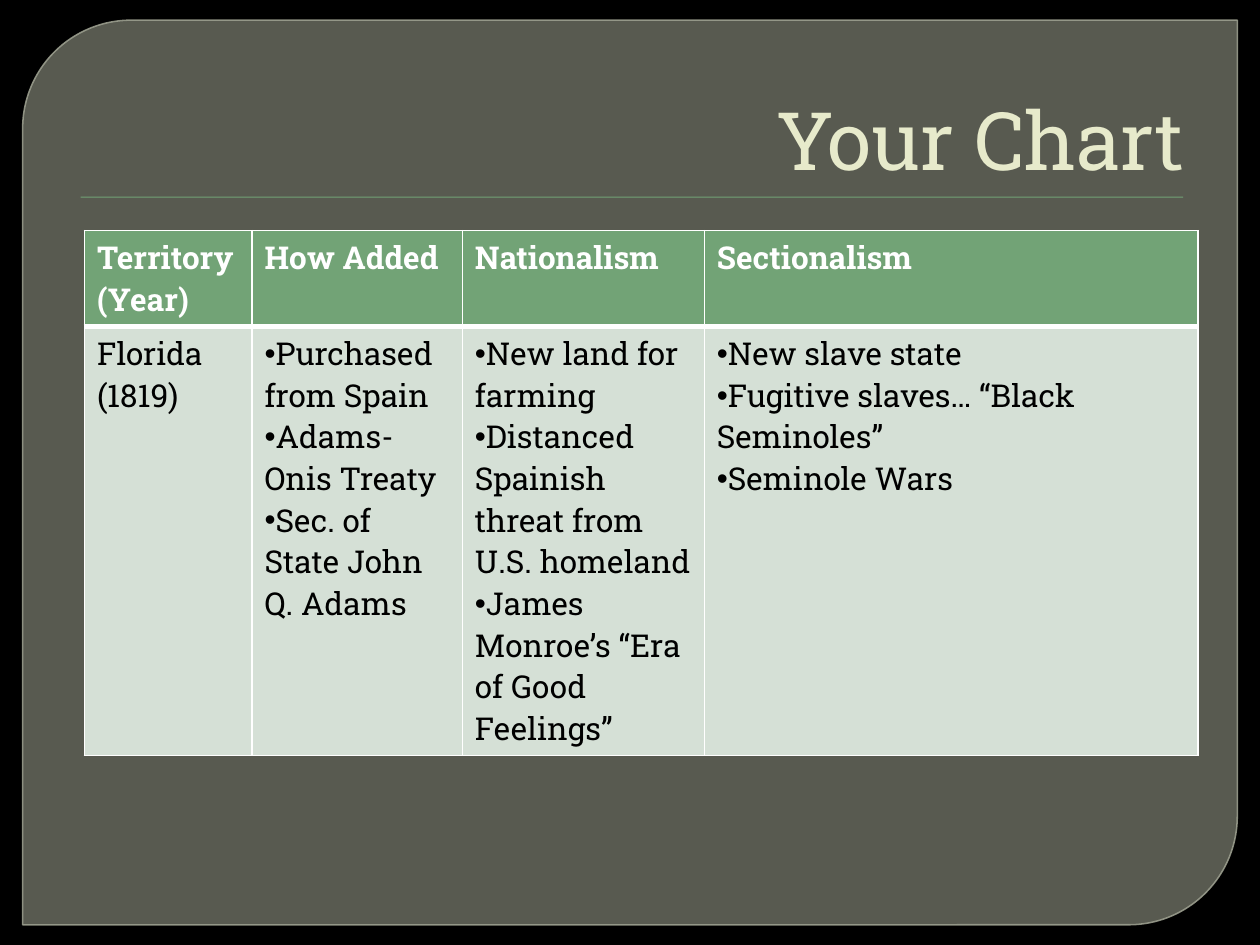
from dataclasses import dataclass

import pptx
import pptx.dml.color
import pptx.enum.shapes
import pptx.enum.text
import pptx.oxml
import pptx.oxml.ns
import pptx.util
from pptx.util import Inches, Pt

FONT_NAME = "Roboto Slab"
GREEN = "72A376"
WHITE = "FFFFFF"
HEADER_FORMAT = {"name": FONT_NAME, "size": Pt(18), "bold": True}
BODY_FORMAT = {"name": FONT_NAME, "size": Pt(18), "bold": False}
TITLE_FORMAT = {"name": FONT_NAME, "size": Pt(46), "bold": False}
HEADER_BORDERS = {"lnL": 1, "lnR": 1, "lnT": 1, "lnB": 3}
BODY_BORDERS = {"lnL": 1, "lnR": 1, "lnT": 3, "lnB": 1}


@dataclass
class Column:
    heading: str
    width: float
    entries: list[str]
    bulleted: bool = True


COLUMNS = [
    Column("Territory (Year)", 1.33, ["Florida (1819)"], bulleted=False),
    Column("How Added", 1.67, [
        "Purchased from Spain",
        "Adams-Onis Treaty",
        "Sec. of State John Q. Adams",
    ]),
    Column("Nationalism", 1.92, [
        "New land for farming",
        "Distanced Spainish threat from U.S. homeland",
        "James Monroe’s “Era of Good Feelings”",
    ]),
    Column("Sectionalism", 3.92, [
        "New slave state",
        "Fugitive slaves… “Black Seminoles”",
        "Seminole Wars",
    ]),
]


def color(value: str) -> pptx.dml.color.RGBColor:
    return pptx.dml.color.RGBColor.from_string(value)


def paint(fill, value: str, opacity: int = 100) -> None:
    """Apply a solid fill, with opacity in percent."""
    fill.solid()
    fill.fore_color.rgb = color(value)
    if opacity < 100:
        element = fill._xPr.find(".//" + pptx.oxml.ns.qn("a:srgbClr"))
        alpha = element.makeelement(pptx.oxml.ns.qn("a:alpha"), {"val": str(opacity * 1000)})
        element.append(alpha)


def format_font(font, settings: dict, value: str) -> None:
    for name, setting in settings.items():
        setattr(font, name, setting)
    font.color.rgb = color(value)


def add_bullet(paragraph) -> None:
    properties = paragraph._p.get_or_add_pPr()
    properties.set("marL", "0")
    properties.set("indent", "0")
    namespace = pptx.oxml.ns.nsdecls("a")
    for xml in (f'<a:buFont {namespace} typeface="Arial"/>', f'<a:buChar {namespace} char="•"/>'):
        properties.append(pptx.oxml.parse_xml(xml))


def set_borders(cell, borders: dict[str, int]) -> None:
    properties = cell._tc.get_or_add_tcPr()
    for position, (tag, width) in enumerate(borders.items()):
        properties.insert(position, pptx.oxml.parse_xml(
            f'<a:{tag} {pptx.oxml.ns.nsdecls("a")} w="{Pt(width)}"><a:solidFill>'
            f'<a:srgbClr val="{WHITE}"/></a:solidFill></a:{tag}>'))


def fill_cell(cell, entries: list[str], bulleted: bool, settings: dict,
              text_color: str, fill_color: str, borders: dict[str, int]) -> None:
    paint(cell.fill, fill_color)
    set_borders(cell, borders)
    cell.text = "\n".join(entries)
    for paragraph in cell.text_frame.paragraphs:
        if bulleted:
            add_bullet(paragraph)
        for run in paragraph.runs:
            format_font(run.font, settings, text_color)


def add_frame(slide) -> None:
    """Draw the rounded panel and the rule under the title."""
    shape_types = pptx.enum.shapes.MSO_SHAPE
    panel = slide.shapes.add_shape(shape_types.ROUND_2_DIAG_RECTANGLE,
                                   Inches(0.18), Inches(0.16), Inches(9.64), Inches(7.18))
    panel.adjustments[0] = 0.12
    panel.adjustments[1] = 0
    paint(panel.fill, "888B7B", 65)
    paint(panel.line.fill, "9DA090", 88)
    panel.line.width = Pt(0.87)
    rule = slide.shapes.add_shape(shape_types.RECTANGLE,
                                  Inches(0.64), Inches(1.56), Inches(8.75), Inches(0.01))
    paint(rule.fill, GREEN)
    rule.line.fill.background()
    for shape in (panel, rule):
        shape.shadow.inherit = False


def place_title(slide) -> None:
    title = slide.shapes.title
    slide.shapes._spTree.append(title._element)  # in front of the panel
    title.left, title.top = Inches(0.5), Inches(0.28)
    title.width, title.height = Inches(9), Inches(1.25)
    title.text = "Your Chart"
    title.text_frame.vertical_anchor = pptx.enum.text.MSO_ANCHOR.BOTTOM
    paragraph = title.text_frame.paragraphs[0]
    paragraph.alignment = pptx.enum.text.PP_ALIGN.RIGHT
    format_font(paragraph.runs[0].font, TITLE_FORMAT, "E7EACB")


def add_territory_table(slide) -> None:
    frame = slide.shapes.add_table(2, len(COLUMNS), Inches(0.67), Inches(1.83),
                                   Inches(8.83), Inches(3.8))
    table = frame.table
    for row in table.rows:
        row.height = Inches(0.41)  # rows grow with their text
    for index, column in enumerate(COLUMNS):
        table.columns[index].width = Inches(column.width)
        fill_cell(table.cell(0, index), [column.heading], False,
                  HEADER_FORMAT, WHITE, GREEN, HEADER_BORDERS)
        fill_cell(table.cell(1, index), column.entries, column.bulleted,
                  BODY_FORMAT, "000000", "D5E0D6", BODY_BORDERS)
    frame.height = Inches(3.8)


def main() -> None:
    presentation = pptx.Presentation()
    presentation.slide_width, presentation.slide_height = Inches(10), Inches(7.5)
    slide = presentation.slides.add_slide(presentation.slide_layouts[5])
    paint(slide.background.fill, "000000")
    add_frame(slide)
    place_title(slide)
    add_territory_table(slide)
    presentation.save("out.pptx")


if __name__ == "__main__":
    main()
